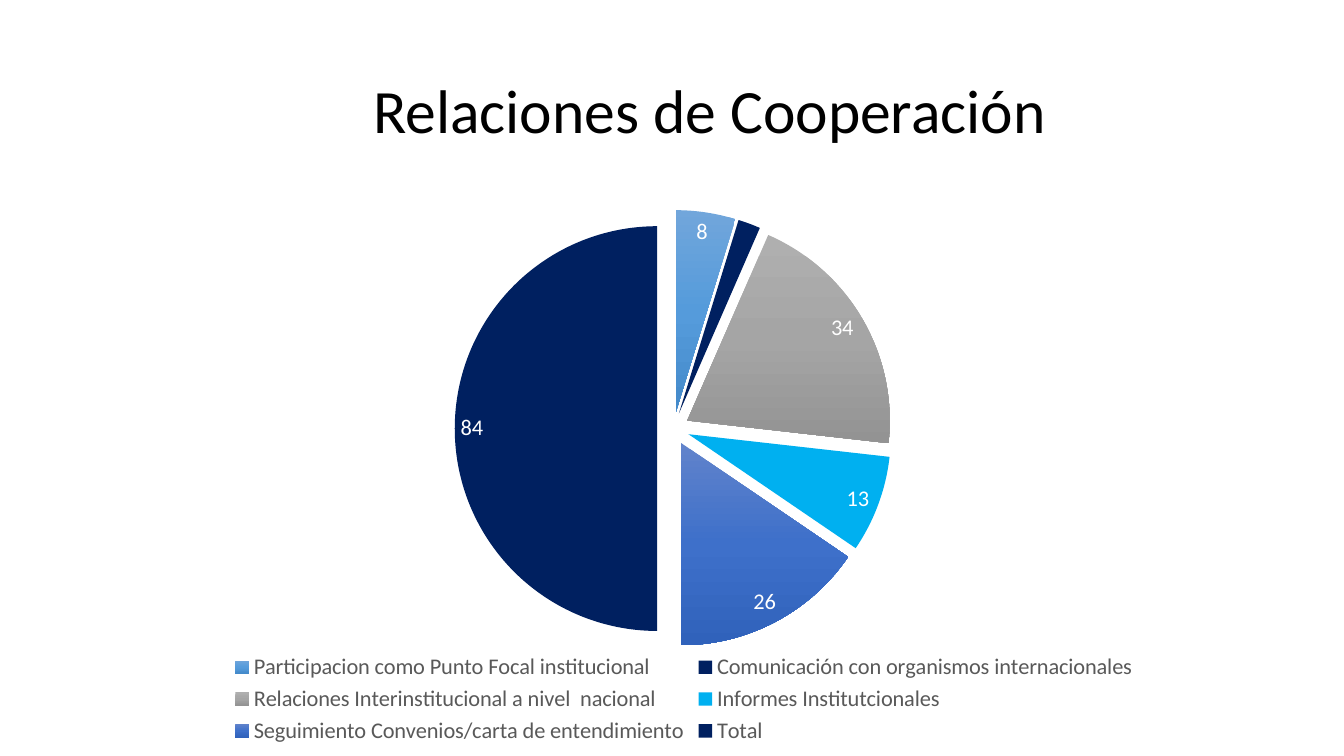
from copy import deepcopy

from lxml.etree import SubElement
from pptx import Presentation
from pptx.chart.data import CategoryChartData
from pptx.dml.color import RGBColor
from pptx.enum.chart import XL_CHART_TYPE, XL_LABEL_POSITION, XL_LEGEND_POSITION
from pptx.enum.text import MSO_ANCHOR, PP_ALIGN
from pptx.oxml.ns import qn
from pptx.util import Pt

EMU_PER_PX = 914400 / 100.8

# Category, value, colours from top to bottom of the slice
RELATIONS = [
    ("Participacion como Punto Focal institucional", 8, ["71A6DB", "559BDB", "448ACA"]),
    ("Comunicación con organismos internacionales", 3, ["002060"]),
    ("Relaciones Interinstitucional a nivel  nacional", 34, ["AFAFAF", "A5A5A5", "939393"]),
    ("Informes Institutcionales", 13, ["00B0F0"]),
    ("Seguimiento Convenios/carta de entendimiento", 26, ["6183CB", "3E70CA", "3062BB"]),
    ("Total", 84, ["002060"]),
]


def px(length):
    return round(length * EMU_PER_PX)


def rgb(color):
    return RGBColor.from_string(color)


def apply(target, values):
    for name, value in values.items():
        setattr(target, name, value)


class SlideBuilder:
    font_name = "Calibri"

    def __init__(self, presentation):
        self.slide = presentation.slides.add_slide(presentation.slide_layouts[5])

    def style_font(self, font, size, color):
        apply(font, {"name": self.font_name, "size": Pt(size)})
        font.color.rgb = rgb(color)

    def title(self, text, left, top, width, height):
        title = self.slide.shapes.title
        apply(title, {"left": px(left), "top": px(top),
                      "width": px(width), "height": px(height)})
        frame = title.text_frame
        apply(frame, {"text": text, "vertical_anchor": MSO_ANCHOR.MIDDLE, "word_wrap": True})
        paragraph = frame.paragraphs[0]
        apply(paragraph, {"alignment": PP_ALIGN.CENTER, "line_spacing": 0.9})
        self.style_font(paragraph.runs[0].font, 44, "000000")

    def fill_slice(self, fill, colors):
        """Fill solid for one colour, or with evenly spaced stops for three."""
        if len(colors) == 1:
            fill.solid()
            fill.fore_color.rgb = rgb(colors[0])
            return
        fill.gradient()
        fill.gradient_angle = 270
        stop_list = fill.gradient_stops._gsLst
        stop_list.append(deepcopy(stop_list[0]))
        for index, (stop, color) in enumerate(zip(fill.gradient_stops, colors)):
            stop.position = index / (len(colors) - 1)
            stop.color.rgb = rgb(color)

    def place_plot(self, chart, x, y, w, h):
        """Set the inner plot area as fractions of the chart."""
        plot_area = chart._chartSpace.find(".//" + qn("c:plotArea"))
        for old_layout in plot_area.findall(qn("c:layout")):
            plot_area.remove(old_layout)
        layout = SubElement(plot_area, qn("c:layout"))
        plot_area.insert(0, layout)
        manual = SubElement(layout, qn("c:manualLayout"))
        settings = {"layoutTarget": "inner", "xMode": "edge", "yMode": "edge",
                    "x": x, "y": y, "w": w, "h": h}
        for tag, value in settings.items():
            SubElement(manual, qn("c:" + tag)).set("val", str(value))

    def explode(self, series, percent):
        element = series._element
        explosion = SubElement(element, qn("c:explosion"))
        explosion.set("val", str(percent))
        element.find(qn("c:dPt")).addprevious(explosion)

    def pie(self, relations, left, top, width, height):
        data = CategoryChartData()
        data.categories = [category for category, _, _ in relations]
        data.add_series("Series 1", [value for _, value, _ in relations])
        chart = self.slide.shapes.add_chart(
            XL_CHART_TYPE.PIE, px(left), px(top), px(width), px(height), data).chart
        apply(chart, {"has_title": False, "has_legend": True})
        self.style_font(chart.font, 16, "000000")
        apply(chart.legend, {"position": XL_LEGEND_POSITION.BOTTOM,
                             "include_in_layout": False})
        self.style_font(chart.legend.font, 16, "595959")

        plot = chart.plots[0]
        plot.vary_by_categories = True
        series = plot.series[0]
        for index, (_, _, colors) in enumerate(relations):
            self.fill_slice(series.points[index].format.fill, colors)
        self.explode(series, 8)
        labels = series.data_labels
        apply(labels, {"show_value": True, "position": XL_LABEL_POSITION.BEST_FIT})
        self.style_font(labels.font, 16, "FFFFFF")
        self.place_plot(chart, 0.004, 0.041, 0.974, 0.778)


def main():
    presentation = Presentation()
    apply(presentation, {"slide_width": px(1344), "slide_height": px(756)})
    builder = SlideBuilder(presentation)
    builder.title("Relaciones de Cooperación", 310, 41, 800, 146)
    builder.pie(RELATIONS, 93, 187, 1182, 562)
    presentation.save("out.pptx")


if __name__ == "__main__":
    main()
